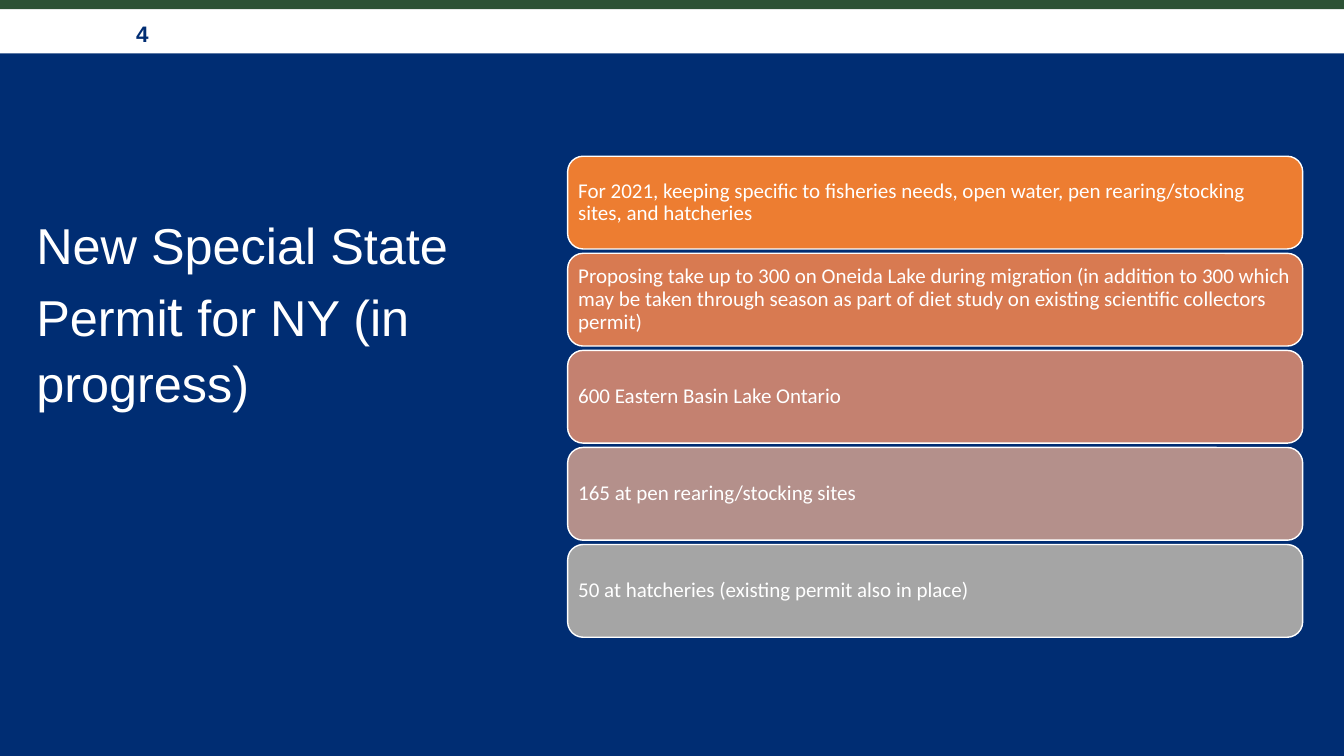
from pptx import Presentation
from pptx.dml.color import RGBColor
from pptx.enum.shapes import MSO_SHAPE as Shape
from pptx.enum.text import MSO_ANCHOR as Anchor, PP_ALIGN as Align
from pptx.util import Inches, Pt

WIDTH, HEIGHT = 13.33, 7.5
COLORS = {"navy": "002D73", "white": "FFFFFF", "green": "2C5234"}
PAGE = "4"
TITLE = [("New Special State Permi", 36), ("t", 40), (" for NY (in progress)", 36)]
ITEMS = [
    ("For 2021, keeping specific to fisheries needs, open water, "
     "pen rearing/stocking sites, and hatcheries", "ED7D31"),
    ("Proposing take up to 300 on Oneida Lake during migration "
     "(in addition to 300 which may be taken through season as part of "
     "diet study on existing scientific collectors permit)", "D87A51"),
    ("600 Eastern Basin Lake Ontario", "C48170"),
    ("165 at pen rearing/stocking sites", "B4908B"),
    ("50 at hatcheries (existing permit also in place)", "A5A5A5"),
]
STRIP, BAND = 0.09, 0.44
LEFT, TOP, CARD_W, CARD_H, PITCH = 5.63, 1.55, 7.29, 0.92, 0.963


def rgb(name):
    return RGBColor.from_string(COLORS.get(name, name))


def block(box, fill, kind=Shape.RECTANGLE, line=None):
    shape = slide.shapes.add_shape(kind, *map(Inches, box))
    shape.shadow.inherit = False
    shape.fill.solid()
    shape.fill.fore_color.rgb = rgb(fill)
    if line:
        shape.line.color.rgb = rgb(line)
        shape.line.width = Pt(1)
    else:
        shape.line.fill.background()
    return shape


def write(shape, runs, font="Arial", color="white", bold=False,
          inset=(0, 0, 0, 0), anchor=Anchor.MIDDLE, spacing=1.0, after=0):
    """Fill the shape with one paragraph made of (text, size) runs."""
    frame = shape.text_frame
    frame.word_wrap = True
    frame.vertical_anchor = anchor
    (frame.margin_left, frame.margin_top,
     frame.margin_right, frame.margin_bottom) = map(Inches, inset)
    para = frame.paragraphs[0]
    para.alignment = Align.LEFT
    para.line_spacing = spacing
    para.space_after = Pt(after)
    for text, size in runs:
        run = para.add_run()
        run.text = text
        run.font.name = font
        run.font.size = Pt(size)
        run.font.bold = bold
        run.font.color.rgb = rgb(color)


deck = Presentation()
deck.slide_width, deck.slide_height = Inches(WIDTH), Inches(HEIGHT)
slide = deck.slides.add_slide(deck.slide_layouts[6])

block((0, 0, WIDTH, HEIGHT), "navy")
band = block((0, STRIP, WIDTH, BAND), "white")
write(band, [(PAGE, 16)], color="navy", bold=True, inset=(1.35, 0.12, 0.4, 0.08))
block((0, 0, WIDTH, STRIP), "green")

title = slide.shapes.add_textbox(*map(Inches, (0.36, 2.08, 4.88, 4.99)))
write(title, TITLE, anchor=Anchor.TOP, spacing=1.08, after=8)

for row, (text, fill) in enumerate(ITEMS):
    card = block((LEFT, TOP + row * PITCH, CARD_W, CARD_H), fill,
                 Shape.ROUNDED_RECTANGLE, "white")
    write(card, [(text, 15)], font="Calibri", inset=(0.06,) * 4, spacing=0.9)

deck.save("out.pptx")
